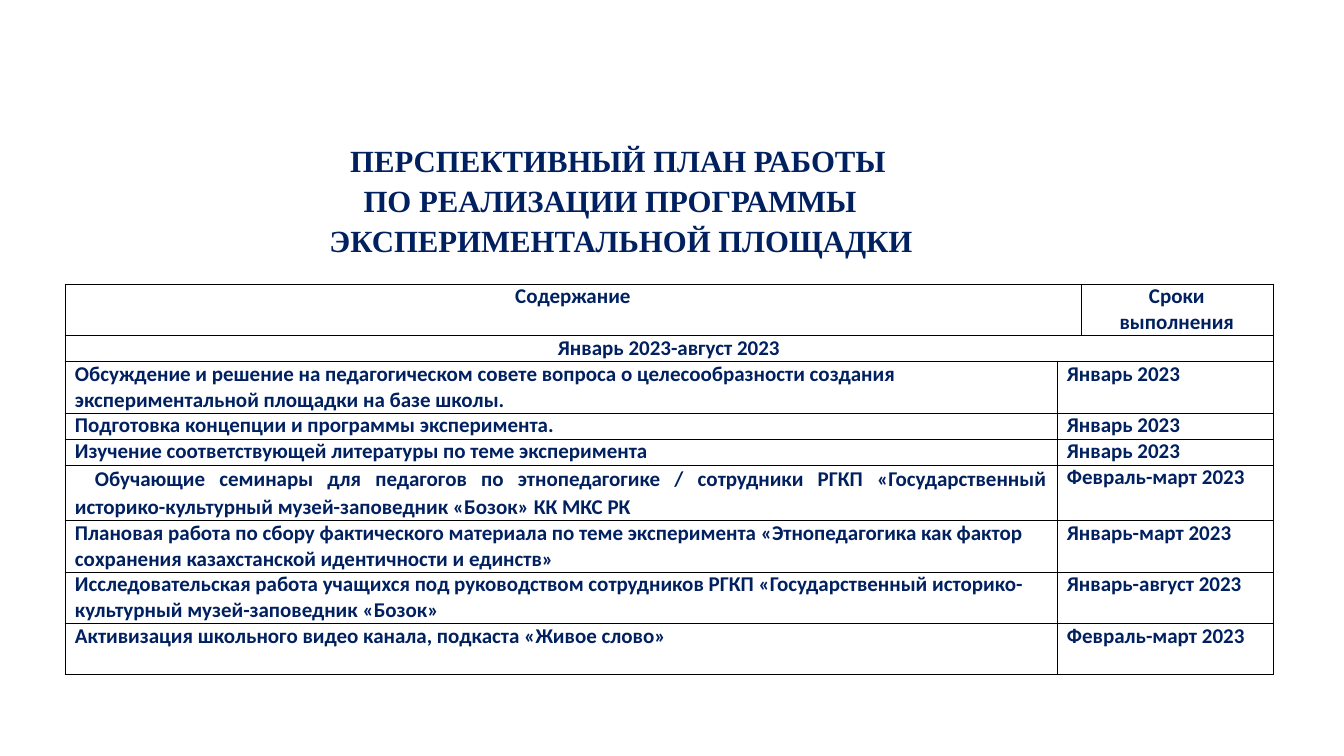
from lxml import etree
from pptx import Presentation
from pptx import util as u
from pptx.dml.color import RGBColor
from pptx.enum import text
from pptx.oxml import ns

PX = 914400 / 100.8
COLORS = {"navy": "002060", "border": "000000"}
TITLE_BOX = (61, 132, 1094, 132)
TABLE_BOX = (65, 284, 1201, 389)
COLUMN_WIDTHS = (992, 17, 192)
ROW_HEIGHTS = (51, 26, 51, 26, 26, 54, 51, 51, 51)
JUSTIFIED_ROW = 5

TITLE_LINES = (  # wording, first-line indent
    ("ПЕРСПЕКТИВНЫЙ ПЛАН РАБОТЫ", 20),
    ("ПО РЕАЛИЗАЦИИ ПРОГРАММЫ", 4),
    ("ЭКСПЕРИМЕНТАЛЬНОЙ ПЛОЩАДКИ", 26),
)
HEADINGS = ("Содержание", "Сроки выполнения")
PERIOD = "Январь 2023-август 2023"
TASKS = (
    ("Обсуждение и решение на педагогическом совете вопроса о целесообразности "
     "создания экспериментальной площадки на базе школы.", "Январь 2023"),
    ("Подготовка концепции и программы эксперимента.", "Январь 2023"),
    ("Изучение соответствующей литературы по теме эксперимента", "Январь 2023"),
    ("Обучающие семинары для педагогов по этнопедагогике / сотрудники РГКП "
     "«Государственный историко-культурный музей-заповедник «Бозок» КК МКС РК",
     "Февраль-март 2023"),
    ("Плановая работа по сбору фактического материала по теме эксперимента "
     "«Этнопедагогика как фактор сохранения казахстанской идентичности и единств»",
     "Январь-март 2023"),
    ("Исследовательская работа учащихся под руководством сотрудников РГКП "
     "«Государственный историко-культурный музей-заповедник «Бозок»",
     "Январь-август 2023"),
    ("Активизация школьного видео канала, подкаста «Живое слово»",
     "Февраль-март 2023"),
)


def px(length):
    return u.Emu(round(length * PX))


def format_paragraph(paragraph, font_name, size, alignment):
    paragraph.alignment = alignment
    for run in paragraph.runs:
        run.font.name = font_name
        run.font.size = u.Pt(size)
        run.font.bold = True
        run.font.color.rgb = RGBColor.from_string(COLORS["navy"])


def indent_first_line(paragraph, indent):
    paragraph.line_spacing = 1.08
    properties = paragraph._p.get_or_add_pPr()
    properties.set("marL", "0")
    properties.set("indent", str(px(indent)))


def add_title(slide, box):
    title = slide.shapes.title
    title.left, title.top, title.width, title.height = map(px, box)
    frame = title.text_frame
    frame.word_wrap = True
    frame.auto_size = text.MSO_AUTO_SIZE.NONE
    frame.vertical_anchor = text.MSO_ANCHOR.TOP
    frame.margin_left = frame.margin_right = px(13)
    frame.margin_top = frame.margin_bottom = px(7)
    frame.text = "\n".join(line for line, _ in TITLE_LINES)
    for paragraph, (_, indent) in zip(frame.paragraphs, TITLE_LINES):
        format_paragraph(paragraph, "Times New Roman", 22, text.PP_ALIGN.CENTER)
        indent_first_line(paragraph, indent)


def style_cell(cell):
    """Give the cell thin borders, no fill and flat margins."""
    properties = cell._tc.get_or_add_tcPr()
    for side in ("lnL", "lnR", "lnT", "lnB"):
        line = etree.SubElement(properties, ns.qn(f"a:{side}"), w=str(u.Pt(0.5)))
        fill = etree.SubElement(line, ns.qn("a:solidFill"))
        etree.SubElement(fill, ns.qn("a:srgbClr"), val=COLORS["border"])
    cell.fill.background()
    cell.margin_left = cell.margin_right = px(10)
    cell.margin_top = cell.margin_bottom = 0


def write_cell(cell, wording, alignment=text.PP_ALIGN.LEFT):
    cell.text = wording
    format_paragraph(cell.text_frame.paragraphs[0], "Calibri", 15, alignment)


def add_plan_table(slide, box):
    table = slide.shapes.add_table(
        len(ROW_HEIGHTS), len(COLUMN_WIDTHS), *map(px, box)).table
    table.first_row = table.horz_banding = False
    for column, width in zip(table.columns, COLUMN_WIDTHS):
        column.width = px(width)
    for row, height in zip(table.rows, ROW_HEIGHTS):
        row.height = px(height)
    for cell in table.iter_cells():
        style_cell(cell)

    table.cell(0, 0).merge(table.cell(0, 1))
    table.cell(1, 0).merge(table.cell(1, 2))
    write_cell(table.cell(0, 0), HEADINGS[0], text.PP_ALIGN.CENTER)
    write_cell(table.cell(0, 2), HEADINGS[1], text.PP_ALIGN.CENTER)
    write_cell(table.cell(1, 0), PERIOD, text.PP_ALIGN.CENTER)
    for row, (task, deadline) in enumerate(TASKS, start=2):
        table.cell(row, 1).merge(table.cell(row, 2))
        write_cell(table.cell(row, 0), task)
        write_cell(table.cell(row, 1), deadline)
    seminars = table.cell(JUSTIFIED_ROW, 0).text_frame.paragraphs[0]
    seminars.alignment = text.PP_ALIGN.JUSTIFY
    indent_first_line(seminars, 20)


def main():
    presentation = Presentation()
    presentation.slide_width, presentation.slide_height = px(1344), px(756)
    slide = presentation.slides.add_slide(presentation.slide_layouts[5])
    add_title(slide, TITLE_BOX)
    add_plan_table(slide, TABLE_BOX)
    presentation.save("out.pptx")


if __name__ == "__main__":
    main()
